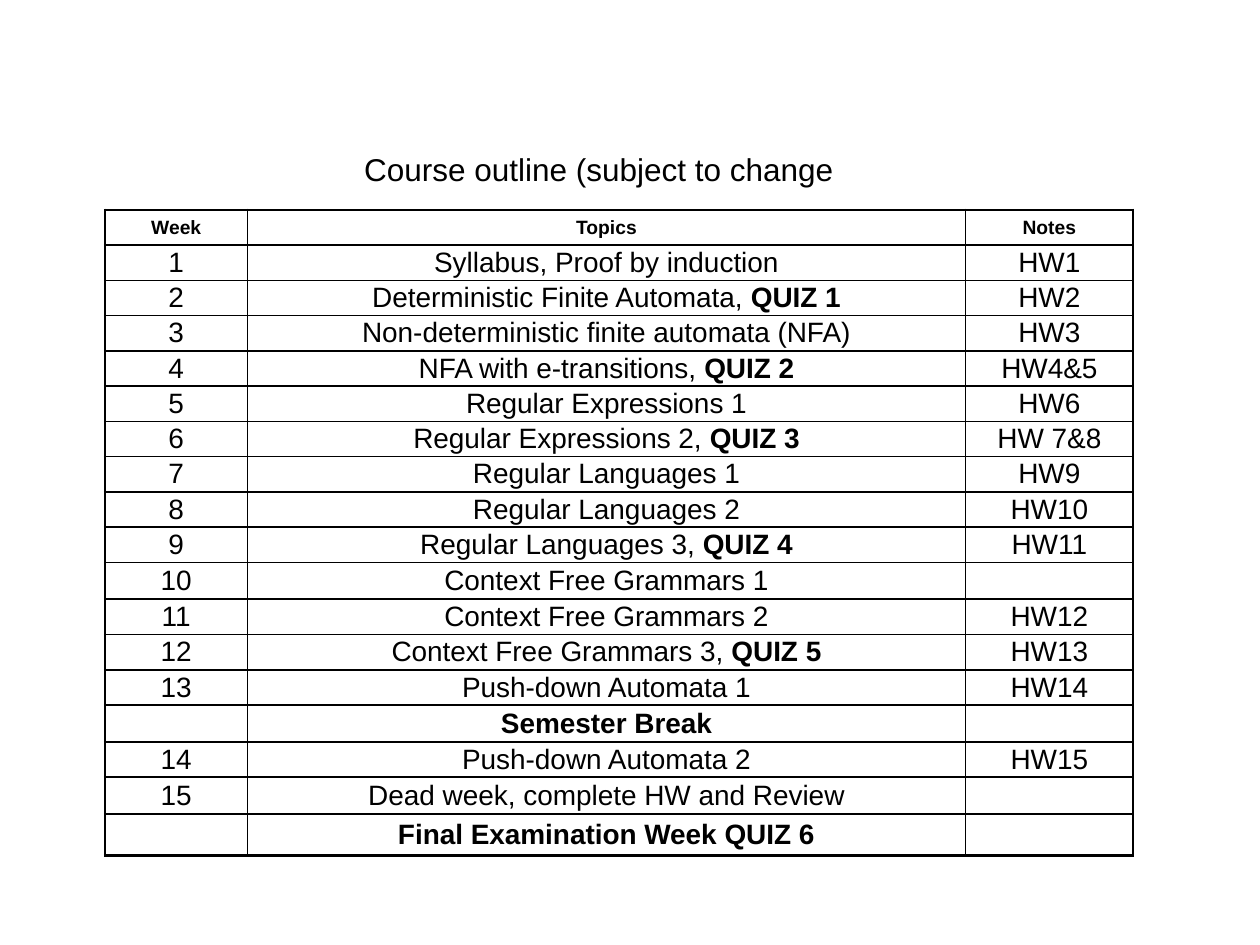
from pptx import Presentation
from pptx.dml.color import RGBColor
from pptx.enum.text import MSO_ANCHOR, MSO_AUTO_SIZE, PP_ALIGN
from pptx.oxml.ns import qn
from pptx.util import Inches, Pt
from lxml.etree import SubElement

COLORS = {"ink": "000000"}
FONT = "Arial"
SLIDE_WIDTH, SLIDE_HEIGHT = Inches(10), Inches(7.5)
COLUMN_WIDTHS = [1.13, 5.7, 1.33]
ROW_HEIGHT, LAST_ROW_HEIGHT = 0.28, 0.33
HEADER_SIZE, BODY_SIZE = 11, 16
THIN, THICK = 1, 1.5

HEADER = ("Week", "", "Topics", "Notes") 
OUTLINE = [
    ("Week", "", "Topics", "Notes"),
    ("1", "Syllabus, Proof by induction", "", "HW1"),
    ("2", "Deterministic Finite Automata, ", "QUIZ 1", "HW2"),
    ("3", "Non-deterministic finite automata (NFA)", "", "HW3"),
    ("4", "NFA with e-transitions, ", "QUIZ 2", "HW4&5"),
    ("5", "Regular Expressions 1", "", "HW6"),
    ("6", "Regular Expressions 2, ", "QUIZ 3", "HW 7&8"),
    ("7", "Regular Languages 1", "", "HW9"),
    ("8", "Regular Languages 2", "", "HW10"),
    ("9", "Regular Languages 3, ", "QUIZ 4", "HW11"),
    ("10", "Context Free Grammars 1", "", ""),
    ("11", "Context Free Grammars 2", "", "HW12"),
    ("12", "Context Free Grammars 3, ", "QUIZ 5", "HW13"),
    ("13", "Push-down Automata 1", "", "HW14"),
    ("", "", "Semester Break", ""),
    ("14", "Push-down Automata 2", "", "HW15"),
    ("15", "Dead week, complete HW and Review", "", ""),
    ("", "", "Final Examination Week QUIZ 6", ""),
]
LAST_ROW = len(OUTLINE) - 1
BREAK_ROW = [row[2] for row in OUTLINE].index("Semester Break")
THICK_ROW_EDGES = {0, 1, BREAK_ROW + 1, len(OUTLINE)}
THICK_COLUMN_EDGES = {0, len(COLUMN_WIDTHS)}


def format_run(run, size, bold=False):
    run.font.name = FONT
    run.font.size = Pt(size)
    run.font.bold = bold
    run.font.color.rgb = RGBColor.from_string(COLORS["ink"])


def add_title(slide, text):
    title = slide.shapes.title
    title.left, title.top = int(SLIDE_WIDTH * 0.279), int(SLIDE_HEIGHT * 0.152)
    title.width, title.height = Inches(4.62), Inches(0.4)
    frame = title.text_frame
    frame.text = text
    frame.word_wrap = True
    frame.auto_size = MSO_AUTO_SIZE.NONE
    frame.vertical_anchor = MSO_ANCHOR.TOP
    paragraph = frame.paragraphs[0]
    paragraph.alignment = PP_ALIGN.LEFT
    format_run(paragraph.runs[0], 18)


def set_borders(cell, row, column):
    row_width = [THICK if edge in THICK_ROW_EDGES else THIN for edge in (row, row + 1)]
    column_width = [THICK if edge in THICK_COLUMN_EDGES else THIN for edge in (column, column + 1)]
    properties = cell._tc.get_or_add_tcPr()
    for side, width in zip("LRTB", column_width + row_width):
        line = SubElement(properties, qn(f"a:ln{side}"), w=str(int(Pt(width))))
        fill = SubElement(line, qn("a:solidFill"))
        SubElement(fill, qn("a:srgbClr"), val=COLORS["ink"])


def fill_cell(cell, parts, size):
    cell.margin_left = cell.margin_right = Inches(0.02)
    cell.margin_top = cell.margin_bottom = Inches(0.01)
    cell.vertical_anchor = MSO_ANCHOR.MIDDLE
    paragraph = cell.text_frame.paragraphs[0]
    paragraph.alignment = PP_ALIGN.CENTER
    for text, bold in parts:
        if text:
            run = paragraph.add_run()
            run.text = text
            format_run(run, size, bold)
    paragraph._p.get_or_add_endParaRPr().set("sz", str(size * 100))


def add_outline_table(slide):
    heights = [ROW_HEIGHT] * LAST_ROW + [LAST_ROW_HEIGHT]
    table = slide.shapes.add_table(
        len(OUTLINE), len(COLUMN_WIDTHS), SLIDE_WIDTH // 12, int(SLIDE_HEIGHT * 0.222),
        Inches(sum(COLUMN_WIDTHS)), Inches(sum(heights))).table
    table.first_row = table.horz_banding = False
    for column, width in zip(table.columns, COLUMN_WIDTHS):
        column.width = Inches(width)
    for index, (week, topic, bold_topic, notes) in enumerate(OUTLINE):
        table.rows[index].height = Inches(heights[index])
        is_header = index == 0
        size = HEADER_SIZE if is_header else BODY_SIZE
        contents = [[(week, is_header)], [(topic, False), (bold_topic, True)], [(notes, is_header)]]
        for column, parts in enumerate(contents):
            cell = table.cell(index, column)
            fill_cell(cell, parts, size)
            set_borders(cell, index, column)
            cell.fill.background()


def main():
    presentation = Presentation()
    presentation.slide_width, presentation.slide_height = SLIDE_WIDTH, SLIDE_HEIGHT
    slide = presentation.slides.add_slide(presentation.slide_layouts[5])
    add_outline_table(slide)
    add_title(slide, "Course outline (subject to change")
    presentation.save("out.pptx")


if __name__ == "__main__":
    main()
